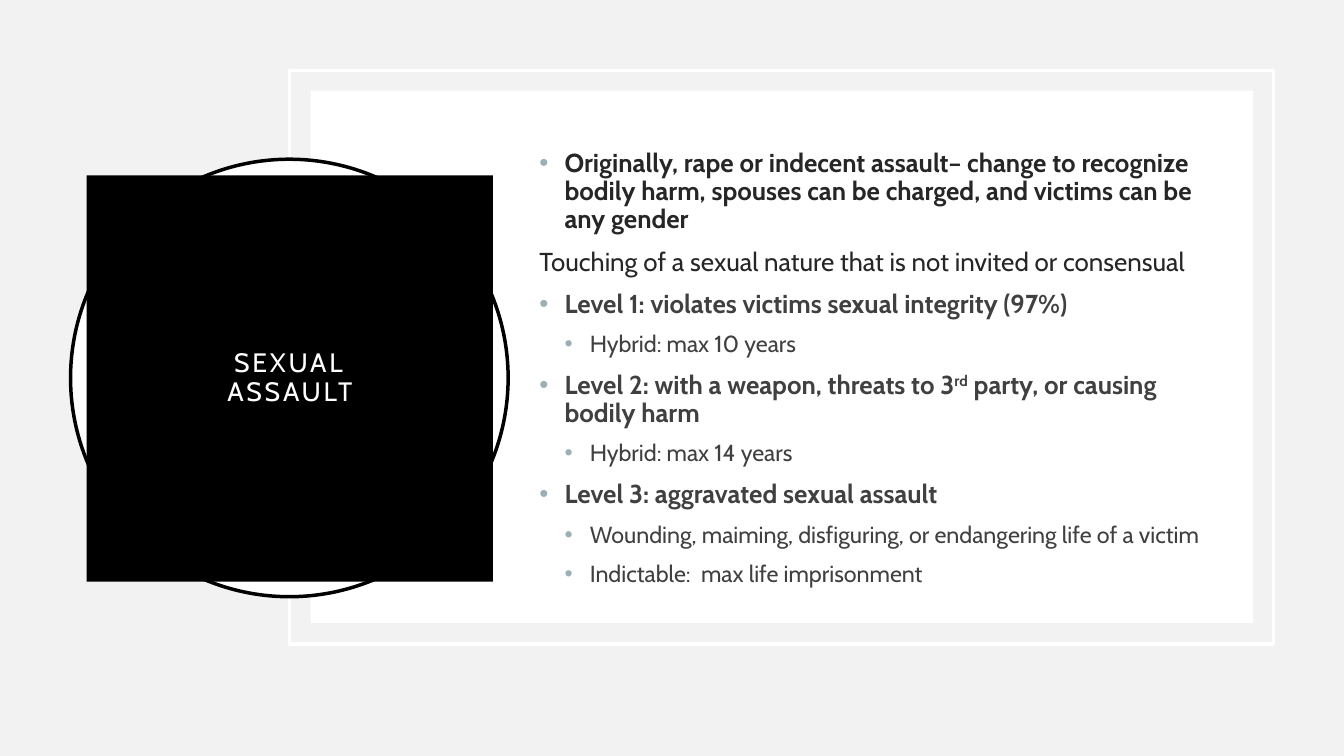
from copy import deepcopy

from lxml import etree
from pptx import Presentation
from pptx import util as u
from pptx.dml.color import RGBColor
from pptx.enum import shapes, text
from pptx.oxml import ns


def paint(fill, colour):
    fill.solid()
    fill.fore_color.rgb = RGBColor.from_string(colour)


def add_span(para, words, size=18.5, colour="404040", bold=False, **attributes):
    span = para.add_run()
    span.text = words
    span.font.name = "Cabin"
    span.font.size = u.Pt(size)
    span.font.bold = bold
    paint(span.font.fill, colour)
    for name, value in attributes.items():
        span.font._element.set(name, str(value))
    return span


deck = Presentation()
deck.slide_width, deck.slide_height = u.Inches(13.33), u.Inches(7.5)
page = deck.slides.add_slide(deck.slide_layouts[1])
paint(page.background.fill, "F2F2F2")

# Frame, white panel and ring
RECT, OVAL = shapes.MSO_SHAPE.RECTANGLE, shapes.MSO_SHAPE.OVAL
for kind, place, fill, line in [
    (RECT, (2.87, 0.7, 9.76, 5.69), None, "FFFFFF"),
    (RECT, (3.08, 0.9, 9.35, 5.28), "FFFFFF", None),
    (OVAL, (0.7, 1.58, 4.34, 4.34), "FFFFFF", "000000"),
]:
    shape = page.shapes.add_shape(kind, *map(u.Inches, place))
    shape.shadow.inherit = False
    if fill:
        paint(shape.fill, fill)
    else:
        shape.fill.background()
    if line:
        paint(shape.line.fill, line)
        shape.line.width = u.Pt(2.5)
    else:
        shape.line.fill.background()

# Title and body placeholders, brought in front of the panel
title, body = page.shapes.title, page.placeholders[1]
for box, place, inset in [
    (title, (0.86, 1.74, 4.03, 4.03), 0.2),
    (body, (5.25, 1.4, 6.94, 4.52), 0.1),
]:
    box.left, box.top, box.width, box.height = map(u.Inches, place)
    box.element.getparent().append(box.element)
    frame = box.text_frame
    frame.word_wrap = True
    frame.auto_size = text.MSO_AUTO_SIZE.NONE
    frame.vertical_anchor = text.MSO_ANCHOR.MIDDLE
    frame.margin_left = frame.margin_right = u.Inches(inset)
    frame.margin_top = frame.margin_bottom = u.Inches(inset if box is title else 0.05)

# Title on its black square
paint(title.fill, "000000")
para = title.text_frame.paragraphs[0]
para.alignment = text.PP_ALIGN.CENTER
para.line_spacing = 0.9
first = add_span(para, "SEXUAL", size=19, colour="FFFFFF", spc=200)
para.add_line_break()
para._p.find(ns.qn("a:br")).append(deepcopy(first.font._element))
add_span(para, "ASSAULT", size=19, colour="FFFFFF", spc=200)

# Body: level (None for plain text), colour, words
points = [
    (0, "262626", "Originally, rape or indecent assault– change to recognize bodily harm, "
                  "spouses can be charged, and victims can be any gender"),
    (None, "262626", "Touching of a sexual nature that is not invited or consensual"),
    (0, "404040", "Level 1: violates victims sexual integrity (97%)"),
    (1, "404040", "Hybrid: max 10 years"),
    (0, "404040", "Level 2: with a weapon, threats to 3^rd^ party, or causing bodily harm"),
    (1, "404040", "Hybrid: max 14 years"),
    (0, "404040", "Level 3: aggravated sexual assault"),
    (1, "404040", "Wounding, maiming, disfiguring, or endangering life of a victim"),
    (1, "404040", "Indictable:  max life imprisonment"),
]
frame = body.text_frame
for number, (level, colour, words) in enumerate(points):
    para = frame.add_paragraph() if number else frame.paragraphs[0]
    para.level = level or 0
    para.line_spacing = 0.9
    para.space_before = u.Pt(10 if number else 0)
    props = para._p.get_or_add_pPr()
    if level is None:
        props.set("marL", "0")
        props.set("indent", "0")
        etree.SubElement(props, ns.qn("a:buNone"))
    else:
        props.set("marL", str(u.Inches(0.25 * (level + 1))))
        props.set("indent", str(u.Inches(-0.25)))
        tint = etree.SubElement(props, ns.qn("a:buClr"))
        etree.SubElement(tint, ns.qn("a:srgbClr"), val="9BAFB5")
        etree.SubElement(props, ns.qn("a:buFont"), typeface="Arial")
        etree.SubElement(props, ns.qn("a:buChar"), char="•")
    # Carets enclose superscript
    for part, piece in enumerate(words.split("^")):
        raised = {"baseline": 30000} if part % 2 else {}
        add_span(para, piece, size=16.6 if level == 1 else 18.5,
                 colour=colour, bold=level == 0, **raised)

deck.save("out.pptx")
